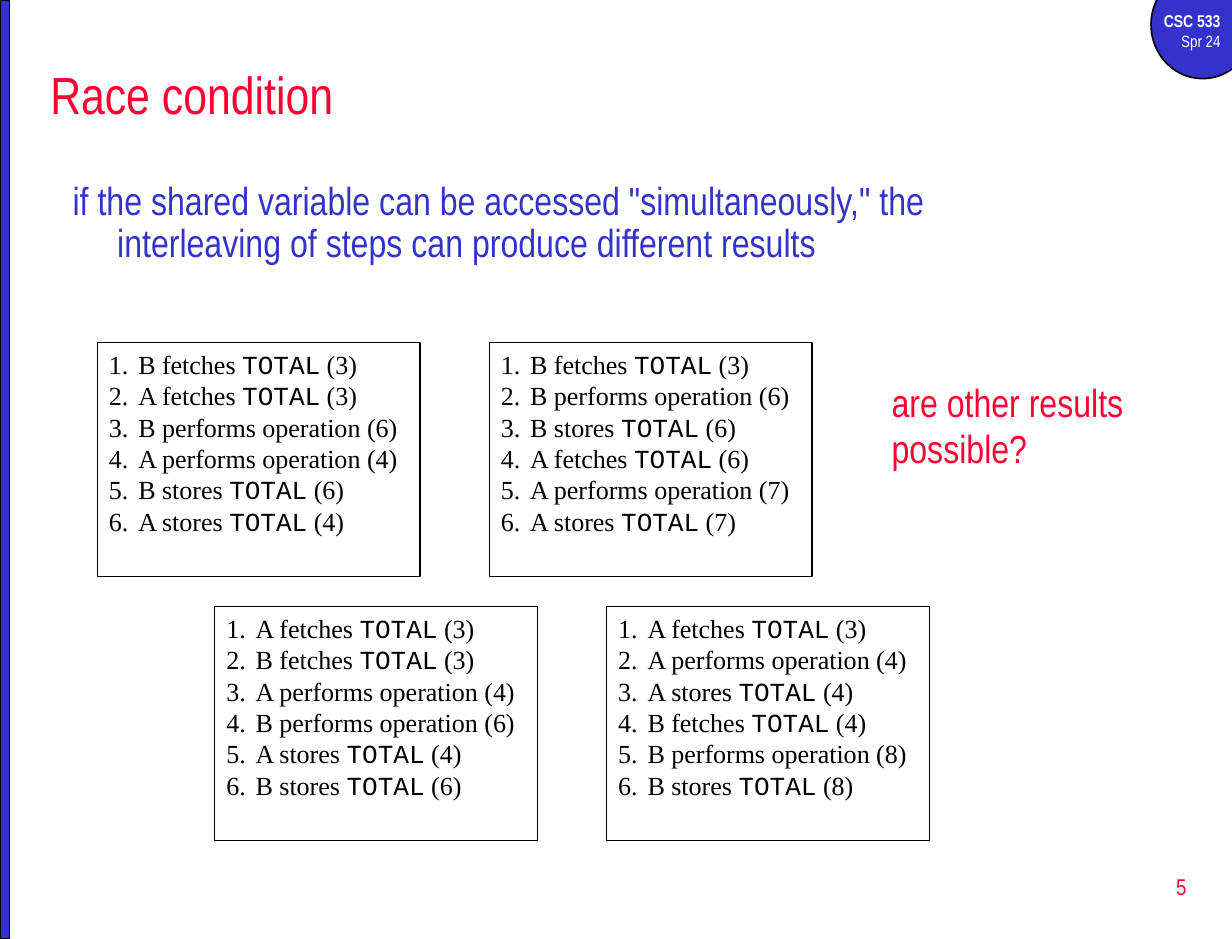
import dataclasses
import typing

import pptx
import pptx.dml.color
import pptx.enum.shapes
import pptx.enum.text
import pptx.oxml.ns
import pptx.util
from lxml import etree

Inches = pptx.util.Inches
Pt = pptx.util.Pt
Align = pptx.enum.text.PP_ALIGN
Anchor = pptx.enum.text.MSO_ANCHOR
Kind = pptx.enum.shapes.MSO_SHAPE
HUES = {"blue": "3333CC", "red": "FF0033", "black": "000000", "white": "FFFFFF"}
NARROW, SERIF, MONO = "Arial Narrow", "Times New Roman", "Courier New"


class Box(typing.NamedTuple):
    left: float
    top: float
    width: float
    height: float


@dataclasses.dataclass
class Label:
    box: Box
    lines: list[str]
    size: float
    hue: str
    para: dict[str, typing.Any] = dataclasses.field(default_factory=dict)
    frame: dict[str, typing.Any] = dataclasses.field(default_factory=dict)


@dataclasses.dataclass
class Trace:
    row: int
    col: int
    steps: list[str]


TRACES = [
    Trace(0, 0, ["B fetches TOTAL (3)", "A fetches TOTAL (3)",
                 "B performs operation (6)", "A performs operation (4)",
                 "B stores TOTAL (6)", "A stores TOTAL (4)"]),
    Trace(0, 1, ["B fetches TOTAL (3)", "B performs operation (6)",
                 "B stores TOTAL (6)", "A fetches TOTAL (6)",
                 "A performs operation (7)", "A stores TOTAL (7)"]),
    Trace(1, 0, ["A fetches TOTAL (3)", "B fetches TOTAL (3)",
                 "A performs operation (4)", "B performs operation (6)",
                 "A stores TOTAL (4)", "B stores TOTAL (6)"]),
    Trace(1, 1, ["A fetches TOTAL (3)", "A performs operation (4)",
                 "A stores TOTAL (4)", "B fetches TOTAL (4)",
                 "B performs operation (8)", "B stores TOTAL (8)"]),
]

LABELS = [
    Label(Box(0.33, 0.42, 9.92, 0.75), ["Race condition"], 32, "red",
          frame={"vertical_anchor": Anchor.MIDDLE}),
    Label(Box(0.52, 1.5, 8.49, 0.98),
          ['if the shared variable can be accessed "simultaneously," the '
           "interleaving of steps can produce different results"], 24, "blue",
          para={"line_spacing": 0.9, "space_before": Pt(4.8)}),
    Label(Box(8.02, 7.29, 2.19, 0.53), ["5"], 14, "red",
          para={"alignment": Align.RIGHT},
          frame={"vertical_anchor": Anchor.MIDDLE}),
    Label(Box(7.5, 3.17, 2.42, 0.91), ["are other results possible?"], 24, "red"),
]
BADGE = Label(Box(9.67, 0.04, 0.83, 0.46), ["CSC 533", "Spr 24"], 10, "white",
              para={"alignment": Align.RIGHT})


def place(box: Box) -> list[int]:
    return [Inches(n) for n in box]


def style(item: typing.Any, values: dict[str, typing.Any]) -> None:
    for name, value in values.items():
        setattr(item, name, value)


def paint(run: typing.Any, face: str, size: float, hue: str, bold: bool = False) -> None:
    style(run.font, {"name": face, "size": Pt(size), "bold": bold})
    run.font.color.rgb = pptx.dml.color.RGBColor.from_string(HUES[hue])


def indent(para: typing.Any, depth: float, count: bool = False) -> None:
    props = para._p.get_or_add_pPr()
    props.set("marL", str(Inches(depth)))
    props.set("indent", str(-Inches(depth)))
    if count:
        mark = etree.SubElement(props, pptx.oxml.ns.qn("a:buAutoNum"))
        mark.set("type", "arabicPeriod")


def lines(frame: typing.Any, texts: list[str]) -> typing.Iterator[tuple[typing.Any, str]]:
    for spot, text in enumerate(texts):
        yield (frame.add_paragraph() if spot else frame.paragraphs[0]), text


def shape(slide: typing.Any, kind: typing.Any, box: Box, weight: float,
          fill: str = "") -> typing.Any:
    form = slide.shapes.add_shape(kind, *place(box))
    form.shadow.inherit = False
    if fill:
        form.fill.solid()
        form.fill.fore_color.rgb = pptx.dml.color.RGBColor.from_string(HUES[fill])
    else:
        form.fill.background()
    form.line.width = Pt(weight)
    form.line.color.rgb = pptx.dml.color.RGBColor.from_string(HUES["black"])
    return form


def write(slide: typing.Any, label: Label) -> typing.Any:
    frame = slide.shapes.add_textbox(*place(label.box)).text_frame
    style(frame, {"word_wrap": True, **label.frame})
    for para, text in lines(frame, label.lines):
        style(para, label.para)
        run = para.add_run()
        run.text = text
        paint(run, NARROW, label.size, label.hue)
    return frame


def draw(slide: typing.Any, trace: Trace) -> None:
    left = 0.83 + trace.row + 3.34 * trace.col
    box = Box(left, 2.92 + 2.25 * trace.row, 2.75, 1.99)
    frame = shape(slide, Kind.RECTANGLE, box, 0.75).text_frame
    style(frame, {"word_wrap": True, "vertical_anchor": Anchor.TOP})
    for para, step in lines(frame, trace.steps):
        para.alignment = Align.LEFT
        indent(para, 0.25, True)
        for part in filter(None, step.partition("TOTAL")):
            run = para.add_run()
            run.text = part
            paint(run, MONO if part == "TOTAL" else SERIF, 16, "black")


def main() -> None:
    deck = pptx.Presentation()
    style(deck, {"slide_width": Inches(10.5), "slide_height": Inches(8)})
    slide = deck.slides.add_slide(deck.slide_layouts[6])
    shape(slide, Kind.OVAL, Box(9.81, -0.25, 0.88, 0.92), 1, "blue")
    badge = write(slide, BADGE)
    paint(badge.paragraphs[0].runs[0], NARROW, 10.5, "white", True)
    shape(slide, Kind.RECTANGLE, Box(0, 0, 0.08, 8), 1, "blue")
    frames = [write(slide, label) for label in LABELS]
    indent(frames[1].paragraphs[0], 0.38)
    for trace in TRACES:
        draw(slide, trace)
    deck.save("out.pptx")


if __name__ == "__main__":
    main()
